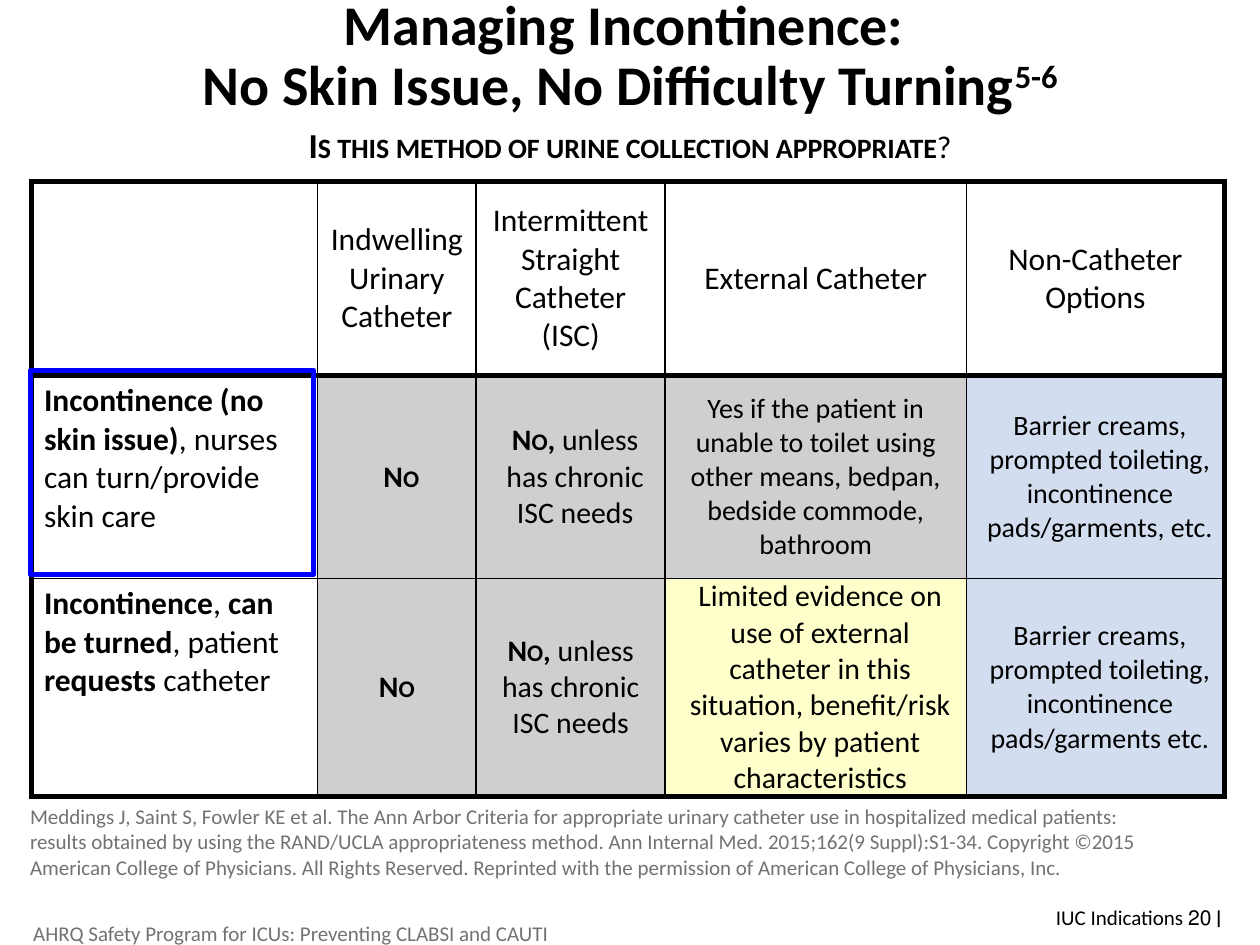
from lxml import etree
from pptx import Presentation
from pptx.dml.color import RGBColor
from pptx.enum.shapes import MSO_SHAPE
from pptx.enum.text import MSO_ANCHOR, PP_ALIGN
from pptx.oxml.ns import qn
from pptx.util import Inches, Pt

LEFT, CENTER, RIGHT = PP_ALIGN.LEFT, PP_ALIGN.CENTER, PP_ALIGN.RIGHT
TOP, MIDDLE = MSO_ANCHOR.TOP, MSO_ANCHOR.MIDDLE
RECTANGLE = MSO_SHAPE.RECTANGLE

BLACK, GRAY_TEXT, BLUE = "000000", "767171", "0000FF"
GRAY, PALE_BLUE, YELLOW = "D0CECE", "D2DEEF", "FFFFCC"
BOLD = {"bold": True}
SMALL_CAPS = {"bold": True, "cap": "small"}


def color(value):
    return RGBColor.from_string(value)


class SlideBuilder:
    font_name = "Calibri"
    thin, thick = 1, 3

    def __init__(self, slide):
        self.slide = slide

    def fill_frame(self, frame, runs, size, align=LEFT, fill=BLACK, indent=0):
        frame.word_wrap = True
        paragraph = frame.paragraphs[0]
        paragraph.alignment = align
        if indent:
            paragraph._p.get_or_add_pPr().set("marL", str(Inches(indent)))
        for text, changes in runs:
            if text == "\n":
                paragraph.add_line_break()
                continue
            run = paragraph.add_run()
            run.text = text
            values = {"name": self.font_name, "size": size, "bold": False, **changes}
            values["size"] = Pt(values["size"])
            properties = run._r.get_or_add_rPr()
            for key in ("cap", "baseline"):
                if key in values:
                    properties.set(key, values.pop(key))
            for key, value in values.items():
                setattr(run.font, key, value)
            run.font.color.rgb = color(fill)
        return paragraph

    def text(self, box, runs, size, align=LEFT, anchor=TOP, fill=BLACK):
        shape = self.slide.shapes.add_textbox(*map(Inches, box))
        shape.text_frame.vertical_anchor = anchor
        return self.fill_frame(shape.text_frame, runs, size, align, fill)

    def outline(self, box, line, width):
        shape = self.slide.shapes.add_shape(RECTANGLE, *map(Inches, box))
        shape.shadow.inherit = False
        shape.fill.background()
        shape.line.color.rgb = color(line)
        shape.line.width = Pt(width)

    def borders(self, cell, widths):
        properties = cell._tc.get_or_add_tcPr()
        for index, (side, width) in enumerate(widths.items()):
            line = etree.Element(qn(f"a:ln{side}"), w=str(Pt(width)))
            solid = etree.SubElement(line, qn("a:solidFill"))
            etree.SubElement(solid, qn("a:srgbClr"), val=BLACK)
            properties.insert(index, line)

    def table(self, box, widths, heights, rows):
        shape = self.slide.shapes.add_table(len(heights), len(widths), *map(Inches, box))
        table = shape.table
        table.first_row = table.horz_banding = False
        for column, width in zip(table.columns, widths):
            column.width = Inches(width)
        for row, height in zip(table.rows, heights):
            row.height = Inches(height)
        last_row, last_column = len(heights) - 1, len(widths) - 1
        for r, row in enumerate(rows):
            for c, (runs, size, fill, indent) in enumerate(row):
                cell = table.cell(r, c)
                if fill:
                    cell.fill.solid()
                    cell.fill.fore_color.rgb = color(fill)
                    cell.margin_left = cell.margin_right = Inches(0.07)
                    cell.margin_top = cell.margin_bottom = 0
                else:
                    cell.fill.background()
                cell.vertical_anchor = MIDDLE if c else TOP
                self.fill_frame(cell.text_frame, runs, size, CENTER if c else LEFT,
                                indent=indent)
                heavy = {"L": c == 0, "R": c == last_column,
                         "T": r < 2, "B": r in (0, last_row)}
                self.borders(cell, {side: self.thick if on else self.thin
                                    for side, on in heavy.items()})


def plain(text):
    return [(text, {})]


def main():
    presentation = Presentation()
    presentation.slide_width, presentation.slide_height = Inches(10), Inches(7.5)
    builder = SlideBuilder(presentation.slides.add_slide(presentation.slide_layouts[6]))

    title = builder.text((0.69, 0.01, 8.62, 0.89), [
        ("Managing Incontinence: ", BOLD), ("\n", {}),
        ("No Skin Issue, No Difficulty Turning", BOLD),
        ("5-6", {"bold": True, "baseline": "30000"}),
    ], 32, CENTER, MIDDLE)
    title.line_spacing = 0.9
    builder.text((1.74, 0.93, 6.52, 0.44), [
        ("Is this method of urine collection appropriate", {**SMALL_CAPS, "size": 20}),
        ("?", {}),
    ], 18, CENTER)

    headings = ["Indwelling Urinary Catheter", "Intermittent Straight Catheter (ISC)",
                "External Catheter", "Non-Catheter Options"]
    no = [("No", SMALL_CAPS)]
    no_unless = no + [(", ", BOLD), ("unless has chronic ISC needs", {})]
    indent = 0.07
    rows = [
        [([], 18, None, 0)] + [(plain(heading), 18, None, 0) for heading in headings],
        [
            ([("Incontinence (no skin issue)", BOLD),
              (", nurses can turn/provide skin care", {})], 18, None, 0),
            (no, 17, GRAY, indent),
            (no_unless, 17, GRAY, indent),
            (plain("Yes if the patient in unable to toilet using other means, "
                   "bedpan, bedside commode, bathroom"), 16, GRAY, 0),
            (plain("Barrier creams, prompted toileting, incontinence "
                   "pads/garments, etc."), 16, PALE_BLUE, indent),
        ],
        [
            ([("Incontinence", BOLD), (", ", {}), ("can be turned", BOLD),
              (", patient ", {}), ("requests ", BOLD), ("catheter", {})], 18, None, 0),
            (no, 17, GRAY, 0),
            (no_unless, 17, GRAY, 0),
            (plain("Limited evidence on use of external catheter in this situation, "
                   "benefit/risk varies by patient characteristics"), 17, YELLOW, indent),
            (plain("Barrier creams, prompted toileting, incontinence "
                   "pads/garments etc."), 16, PALE_BLUE, indent),
        ],
    ]
    builder.table((0.25, 1.44, 9.47, 4.89), [2.27, 1.26, 1.5, 2.39, 2.05],
                  [1.54, 1.61, 1.73], rows)
    builder.outline((0.24, 2.94, 2.25, 1.62), BLUE, 3)

    builder.text((0.14, 6.33, 9.3, 0.71), plain(
        "Meddings J, Saint S, Fowler KE et al. The Ann Arbor Criteria for appropriate "
        "urinary catheter use in hospitalized medical patients: results obtained by using "
        "the RAND/UCLA appropriateness method. Ann Internal Med. 2015;162(9 Suppl):S1-34. "
        "Copyright ©2015 American College of Physicians. All Rights Reserved. Reprinted "
        "with the permission of American College of Physicians, Inc."), 12, fill=GRAY_TEXT)
    builder.text((0.11, 7.21, 4.4, 0.4),
                 plain("AHRQ Safety Program for ICUs: Preventing CLABSI and CAUTI"),
                 12, CENTER, MIDDLE, GRAY_TEXT)
    builder.text((7.54, 7.08, 2.25, 0.4), [
        ("IUC Indications ", {}), ("׀ ", {"name": "Lato"}), ("20", {}),
    ], 12, RIGHT, MIDDLE)
    presentation.save("out.pptx")


if __name__ == "__main__":
    main()
